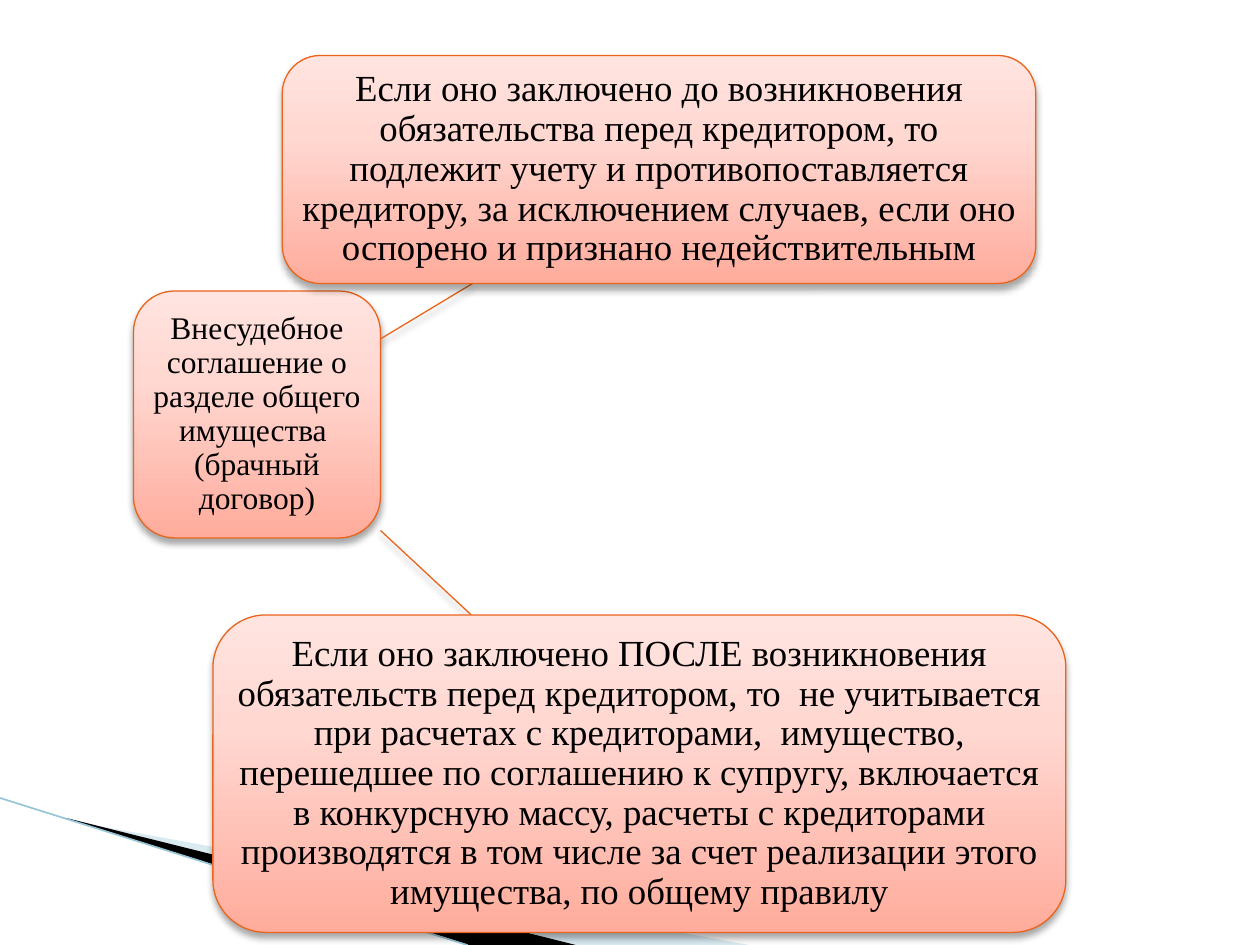
from copy import deepcopy
from dataclasses import dataclass

from lxml.etree import SubElement
from pptx import Presentation
from pptx.dml.color import RGBColor
from pptx.enum.shapes import MSO_CONNECTOR, MSO_SHAPE
from pptx.enum.text import MSO_ANCHOR, PP_ALIGN
from pptx.oxml.ns import qn
from pptx.util import Pt


@dataclass(frozen=True)
class Theme:
    """Colours, type and line sizes of the slide."""
    font: str = "Times New Roman"
    text: str = "000000"
    outline: str = "EB641B"
    outline_width: float = 0.75
    gradient: tuple = ((0, "FFAC9C"), (0.65, "FFD8D2"), (1, "FFE4DF"))
    shadow: str = "000000"
    wedge_dark: str = "000000"
    wedge_light: str = "A0CBDC"
    wedge_line: str = "97C5D8"
    wedge_line_width: float = 0.95
    topic_size: int = 18
    case_size: int = 21


THEME = Theme()
TOPIC = "Внесудебное соглашение о разделе общего имущества  (брачный договор)"
BEFORE = (
    "Если оно заключено до возникновения обязательства перед кредитором, то "
    "подлежит учету и противопоставляется кредитору, за исключением случаев, "
    "если оно оспорено и признано недействительным"
)
AFTER = (
    "Если оно заключено ПОСЛЕ возникновения обязательств перед кредитором, то  "
    "не учитывается при расчетах с кредиторами,  имущество, перешедшее по "
    "соглашению к супругу, включается в конкурсную массу, расчеты с кредиторами "
    "производятся в том числе за счет реализации этого имущества, по общему правилу"
)


def color(value):
    """Return the colour of a hex value."""
    return RGBColor.from_string(value)


def apply_format(target, values):
    """Set attributes of an object from a dict."""
    for name, value in values.items():
        setattr(target, name, value)


def add_effects(shape, shadow=True):
    """Give a shape the soft lower shadow, or none."""
    properties = shape._element.spPr
    for old in properties.findall(qn("a:effectLst")):
        properties.remove(old)
    effects = SubElement(properties, qn("a:effectLst"))
    if shadow:
        outer = SubElement(effects, qn("a:outerShdw"), blurRad=str(Pt(4)),
                           dist=str(Pt(3)), dir="5400000", rotWithShape="0")
        tint = SubElement(outer, qn("a:srgbClr"), val=THEME.shadow)
        SubElement(tint, qn("a:alpha"), val="35000")


def add_line(page, start, end, line_color, width, shadow):
    """Draw a straight line between two points."""
    line = page.shapes.add_connector(
        MSO_CONNECTOR.STRAIGHT, *map(Pt, (*start, *end)))
    line.line.color.rgb = color(line_color)
    line.line.width = Pt(width)
    add_effects(line, shadow)


def add_wedge(page, points, fill_color, opacity=None):
    """Draw a filled sliver through the given points."""
    corners = [(Pt(x), Pt(y)) for x, y in points]
    builder = page.shapes.build_freeform(*corners[0])
    builder.add_line_segments(corners[1:], close=True)
    wedge = builder.convert_to_shape()
    wedge.shadow.inherit = False
    wedge.fill.solid()
    wedge.fill.fore_color.rgb = color(fill_color)
    wedge.line.fill.background()
    if opacity is not None:
        tint = wedge._element.spPr.find(".//" + qn("a:srgbClr"))
        SubElement(tint, qn("a:alpha"), val=str(opacity * 1000))


def add_corner(page, box):
    """Draw the decorative wedges and line in the lower corner."""
    left, top, width, height = box
    bottom = top + height
    add_wedge(page, [(left + 40, top + 13), (left + width, bottom),
                     (left + 328, bottom), (left + 40, top + 12)],
              THEME.wedge_light, 40)
    add_wedge(page, [(left + 38, top + 11.5), (left + 329, bottom),
                     (left + 268, bottom), (left + 39, top + 12)],
              THEME.wedge_dark)
    add_line(page, (left, top), (left + 267, bottom),
             THEME.wedge_line, THEME.wedge_line_width, False)


def add_card(page, box, text, size, inset):
    """Draw a rounded gradient card with centred text."""
    card = page.shapes.add_shape(MSO_SHAPE.ROUNDED_RECTANGLE, *map(Pt, box))
    card.fill.gradient()
    card.fill.gradient_angle = 90
    stops = card._element.spPr.find(".//" + qn("a:gsLst"))
    stops.append(deepcopy(stops[-1]))
    for stop, (position, value) in zip(card.fill.gradient_stops, THEME.gradient):
        stop.position = position
        stop.color.rgb = color(value)
    card.line.color.rgb = color(THEME.outline)
    card.line.width = Pt(THEME.outline_width)
    add_effects(card)

    frame = card.text_frame
    apply_format(frame, {
        "word_wrap": True, "vertical_anchor": MSO_ANCHOR.MIDDLE,
        **{f"margin_{side}": Pt(inset)
           for side in ("left", "top", "right", "bottom")},
    })
    para = frame.paragraphs[0]
    apply_format(para, {"alignment": PP_ALIGN.CENTER, "line_spacing": 0.9})
    span = para.add_run()
    span.text = text
    apply_format(span.font, {"name": THEME.font, "size": Pt(size)})
    span.font.color.rgb = color(THEME.text)


def add_diagram(page, box):
    """Draw the agreement card and the two cases joined to it."""
    left, top, width, height = box
    topic_side = 141.1
    topic_right = left + topic_side
    before_height, after_height = 130.3, 181.4
    after_top = top + height - after_height
    add_card(page, (left, top + 134.6, topic_side, topic_side),
             TOPIC, THEME.topic_size, 3.6)
    cases = [
        ((topic_right, top + 162), (left + 193.7, top + before_height),
         (left + 85, top, 430.6, before_height), BEFORE),
        ((topic_right, top + 271.4), (left + 193, after_top),
         (left + 45.4, after_top, width - 45.4, after_height), AFTER),
    ]
    for start, end, case_box, text in cases:
        add_line(page, start, end, THEME.outline, THEME.outline_width, True)
        add_card(page, case_box, text, THEME.case_size, 4.5)


def main():
    """Build and save the slide."""
    deck = Presentation()
    deck.slide_width, deck.slide_height = Pt(720), Pt(540)
    page = deck.slides.add_slide(deck.slide_layouts[6])
    add_corner(page, (0, 456, 428, 84))
    add_diagram(page, (76.3, 31.7, 532.8, 501.1))
    deck.save("out.pptx")


if __name__ == "__main__":
    main()
